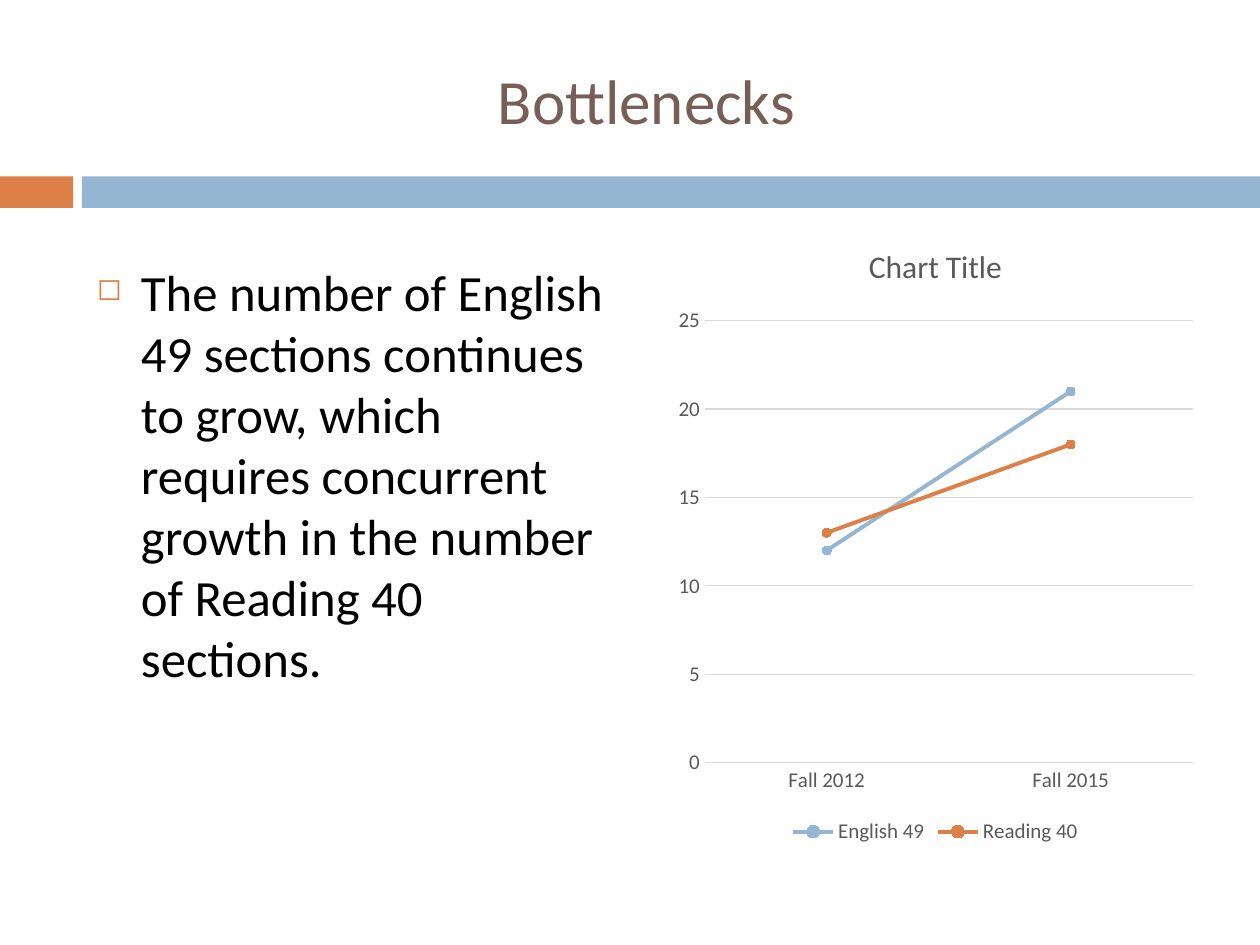
from lxml import etree
from pptx import Presentation
from pptx import util as u
from pptx.chart.data import CategoryChartData
from pptx.dml.color import RGBColor
from pptx.enum import chart as ch, shapes, text
from pptx.oxml import ns

FONT = "Calibri"
BLUE, ORANGE, GREY, RULE = "94B6D2", "DD8047", "595959", "D9D9D9"


def color(code):
    return RGBColor.from_string(code)


def paint(fill, code):
    fill.solid()
    fill.fore_color.rgb = color(code)


def style(font, size, code):
    for key, value in {"name": FONT, "size": u.Pt(size), "bold": False}.items():
        setattr(font, key, value)
    font.color.rgb = color(code)


def stroke(line, code, width):
    line.color.rgb = color(code)
    line.width = u.Pt(width)


def add_bar(slide, left, width, code):
    bar = slide.shapes.add_shape(shapes.MSO_SHAPE.RECTANGLE, u.Inches(left),
                                 u.Inches(1.4), u.Inches(width), u.Inches(0.25))
    bar.shadow.inherit = False
    paint(bar.fill, code)
    bar.line.fill.background()


def add_text(slide, words, box, size, code, **frame):
    """Add a one-paragraph text box and return its paragraph."""
    body = slide.shapes.add_textbox(*map(u.Inches, box)).text_frame
    body.word_wrap = True
    for key, value in frame.items():
        setattr(body, key, value)
    para = body.paragraphs[0]
    run = para.add_run()
    run.text = words
    style(run.font, size, code)
    return para


def add_bullet(para, mark, code, percent, indent):
    props = para._p.get_or_add_pPr()
    props.set("marL", str(u.Inches(indent)))
    props.set("indent", str(-u.Inches(indent)))
    tint = etree.SubElement(props, ns.qn("a:buClr"))
    etree.SubElement(tint, ns.qn("a:srgbClr"), val=code)
    etree.SubElement(props, ns.qn("a:buSzPct"), val=str(percent * 1000))
    etree.SubElement(props, ns.qn("a:buChar"), char=mark)


def add_lines(slide, title, cats, rows, box):
    """Add a line chart; rows hold name, values and colour."""
    data = CategoryChartData()
    data.categories = cats
    for name, values, _ in rows:
        data.add_series(name, values)
    chart = slide.shapes.add_chart(ch.XL_CHART_TYPE.LINE_MARKERS,
                                   *map(u.Inches, box), data).chart
    style(chart.font, 10, "000000")
    head = chart.chart_title.text_frame
    head.text = title
    style(head.paragraphs[0].runs[0].font, 18, GREY)

    chart.has_legend = True
    chart.legend.position = ch.XL_LEGEND_POSITION.BOTTOM
    chart.legend.include_in_layout = False
    style(chart.legend.font, 12, GREY)

    cat, val = chart.category_axis, chart.value_axis
    for axis in (cat, val):
        axis.major_tick_mark = axis.minor_tick_mark = ch.XL_TICK_MARK.NONE
        style(axis.tick_labels.font, 12, GREY)
    stroke(cat.format.line, RULE, 0.75)
    val.format.line.fill.background()
    stroke(val.major_gridlines.format.line, RULE, 0.75)
    for key, value in {"minimum_scale": 0, "maximum_scale": 25, "major_unit": 5}.items():
        setattr(val, key, value)

    plot = chart.plots[0]
    plot.vary_by_categories = False
    for line, (_, _, code) in zip(plot.series, rows):
        line.smooth = False
        stroke(line.format.line, code, 2.25)
        line.marker.style = ch.XL_MARKER_STYLE.CIRCLE
        line.marker.size = 5
        paint(line.marker.format.fill, code)
        stroke(line.marker.format.line, code, 0.75)


def main():
    deck = Presentation()
    deck.slide_width, deck.slide_height = u.Inches(10), u.Inches(7.5)
    slide = deck.slides.add_slide(deck.slide_layouts[6])

    add_bar(slide, 0, 0.58, ORANGE)
    add_bar(slide, 0.65, 9.35, BLUE)
    title = add_text(slide, "Bottlenecks", (0.67, 0.25, 8.92, 1.08), 36, "775F55",
                     vertical_anchor=text.MSO_ANCHOR.MIDDLE)
    title.alignment = text.PP_ALIGN.CENTER
    point = add_text(slide, "The number of English 49 sections continues to grow, "
                     "which requires concurrent growth in the number of "
                     "Reading 40 sections.", (0.67, 1.74, 4.25, 5), 29, "000000",
                     margin_top=u.Inches(0.33), margin_right=u.Inches(0.05))
    add_bullet(point, "◻", ORANGE, 60, 0.35)
    add_lines(slide, "Chart Title", ["Fall 2012", "Fall 2015"],
              [("English 49", (12, 21), BLUE), ("Reading 40", (13, 18), ORANGE)],
              (5.3, 1.74, 4.25, 5))
    deck.save("out.pptx")


if __name__ == "__main__":
    main()
